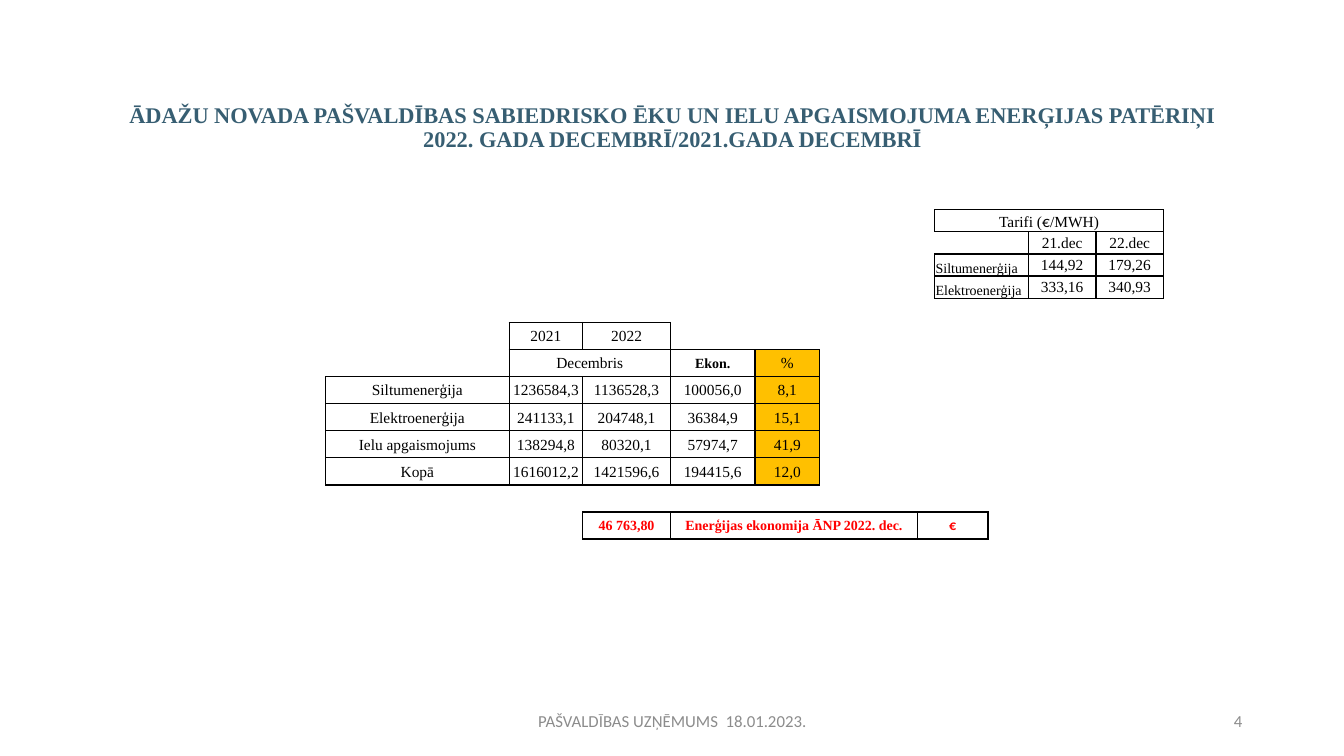
from collections import namedtuple
from dataclasses import dataclass
from lxml.etree import SubElement
from pptx import Presentation
from pptx.dml.color import RGBColor
from pptx.enum.text import MSO_ANCHOR as Anchor, PP_ALIGN as Align
from pptx.oxml.ns import qn
from pptx.util import Inches, Pt

Box = namedtuple("Box", "left top width height")


@dataclass(frozen=True)
class Theme:
    serif: str = "Times New Roman"
    sans: str = "Calibri"
    title: str = "375E72"
    ink: str = "000000"
    muted: str = "8C8C8C"
    alert: str = "FF0000"
    accent: str = "FFC000"
    white: str = "FFFFFF"
    title_size: int = 16
    footer_size: int = 12
    cell_size: int = 11
    small_size: int = 10
    plain_style: str = "{2D5ABB26-0587-4C30-8999-92F81FD0307C}"


THEME = Theme()
SPAN = "<"
ALERT = dict(size=THEME.small_size, color=THEME.alert, bold=True)
LABEL = dict(size=THEME.small_size, align=Align.LEFT, anchor=Anchor.BOTTOM)

TARIFFS = [
    ["Tarifi (€/MWH)", SPAN, SPAN],
    [None, "21.dec", "22.dec"],
    ["Siltumenerģija", "144,92", "179,26"],
    ["Elektroenerģija", "333,16", "340,93"],
]
TARIFF_FORMATS = {(0, 0): dict(anchor=Anchor.BOTTOM), (2, 0): LABEL, (3, 0): LABEL}

CONSUMPTION = [
    [None, None, "2021", "2022", None, None, None, None],
    [None, None, "Decembris", SPAN, "Ekon.", "%", None, None],
    ["Siltumenerģija", SPAN, "1236584,3", "1136528,3", "100056,0", "8,1", None, None],
    ["Elektroenerģija", SPAN, "241133,1", "204748,1", "36384,9", "15,1", None, None],
    ["Ielu apgaismojums", SPAN, "138294,8", "80320,1", "57974,7", "41,9", None, None],
    ["Kopā", SPAN, "1616012,2", "1421596,6", "194415,6", "12,0", None, None],
    [None] * 8,
    [None, None, None, "46 763,80", "Enerģijas ekonomija ĀNP 2022. dec.", SPAN, SPAN, "€"],
]
CONSUMPTION_FORMATS = {
    (1, 4): dict(size=THEME.small_size, bold=True),
    **{(row, 5): dict(fill=THEME.accent) for row in range(1, 6)},
    **{(row, column): dict(fill=THEME.white) for row in (2, 3) for column in (2, 3, 4)},
    **{(7, column): ALERT for column in (3, 4, 7)},
}


def write_text(frame, text, font=THEME.serif, size=THEME.cell_size, color=THEME.ink,
               bold=False, align=Align.CENTER, spacing=None):
    para = frame.paragraphs[0]
    para.alignment = align
    para.line_spacing = spacing
    before, euro, after = text.partition("€")
    for part in filter(None, (before, euro, after)):
        span = para.add_run()
        span.text = part
        span.font.name = THEME.sans if part == "€" else font
        span.font.size = Pt(size)
        span.font.bold = bold
        span.font.color.rgb = RGBColor.from_string(color)


def place(shape, box):
    shape.left, shape.top, shape.width, shape.height = map(Inches, box)


def add_title(page, box, text):
    title = page.shapes.title
    place(title, box)
    frame = title.text_frame
    frame.word_wrap = True
    frame.vertical_anchor = Anchor.MIDDLE
    write_text(frame, text, size=THEME.title_size, color=THEME.title, bold=True, spacing=0.9)


def add_footer(page, box, text, align):
    frame = page.shapes.add_textbox(*map(Inches, box)).text_frame
    frame.word_wrap = True
    frame.vertical_anchor = Anchor.MIDDLE
    write_text(frame, text, font=THEME.sans, size=THEME.footer_size,
               color=THEME.muted, align=align)


def draw_borders(cell):
    properties = cell._tc.get_or_add_tcPr()
    for side in ("lnL", "lnR", "lnT", "lnB"):
        line = SubElement(properties, qn(f"a:{side}"), w=str(Pt(1)))
        fill = SubElement(line, qn("a:solidFill"))
        SubElement(fill, qn("a:srgbClr"), val=THEME.ink)


def format_cell(cell, text, fill=None, anchor=Anchor.MIDDLE, **text_format):
    cell.margin_left = cell.margin_right = cell.margin_top = Inches(0.01)
    cell.margin_bottom = 0
    cell.vertical_anchor = anchor
    if text:
        draw_borders(cell)
    if fill:
        cell.fill.solid()
        cell.fill.fore_color.rgb = RGBColor.from_string(fill)
    else:
        cell.fill.background()
    if text and text != SPAN:
        write_text(cell.text_frame, text, **text_format)
    else:
        para = cell.text_frame.paragraphs[0]._p
        SubElement(para, qn("a:endParaRPr"), sz=str(THEME.cell_size * 100))


def add_grid(page, box, widths, rows, formats):
    grid = page.shapes.add_table(len(rows), len(widths), *map(Inches, box)).table
    grid.first_row = grid.horz_banding = False
    grid._tbl.tblPr.find(qn("a:tableStyleId")).text = THEME.plain_style
    for column, width in zip(grid.columns, widths):
        column.width = Inches(width)
    for row in grid.rows:
        row.height = Inches(box.height / len(rows))
    for r, texts in enumerate(rows):
        for c, text in enumerate(texts):
            format_cell(grid.cell(r, c), text, **formats.get((r, c), {}))
        for c, text in enumerate(texts):
            end = c
            while end + 1 < len(texts) and texts[end + 1] == SPAN:
                end += 1
            if text != SPAN and end > c:
                grid.cell(r, c).merge(grid.cell(r, end))


def main():
    deck = Presentation()
    deck.slide_width, deck.slide_height = Inches(13.33), Inches(7.5)
    page = deck.slides.add_slide(deck.slide_layouts[5])
    add_title(page, Box(0.92, 0.55, 11.5, 1.45),
              "ĀDAŽU NOVADA PAŠVALDĪBAS SABIEDRISKO ĒKU UN IELU APGAISMOJUMA "
              "ENERĢIJAS PATĒRIŅI 2022. GADA DECEMBRĪ/2021.GADA DECEMBRĪ")
    add_footer(page, Box(4.42, 6.95, 4.5, 0.4),
               "PAŠVALDĪBAS UZŅĒMUMS  18.01.2023.", Align.CENTER)
    add_footer(page, Box(9.42, 6.95, 3, 0.4), "4", Align.RIGHT)
    add_grid(page, Box(3.23, 3.2, 6.58, 2.15),
             [0.87, 0.95, 0.73, 0.87, 0.84, 0.64, 0.97, 0.7],
             CONSUMPTION, CONSUMPTION_FORMATS)
    add_grid(page, Box(9.27, 2.08, 2.26, 0.88), [0.93, 0.67, 0.67],
             TARIFFS, TARIFF_FORMATS)
    deck.save("out.pptx")


if __name__ == "__main__":
    main()
